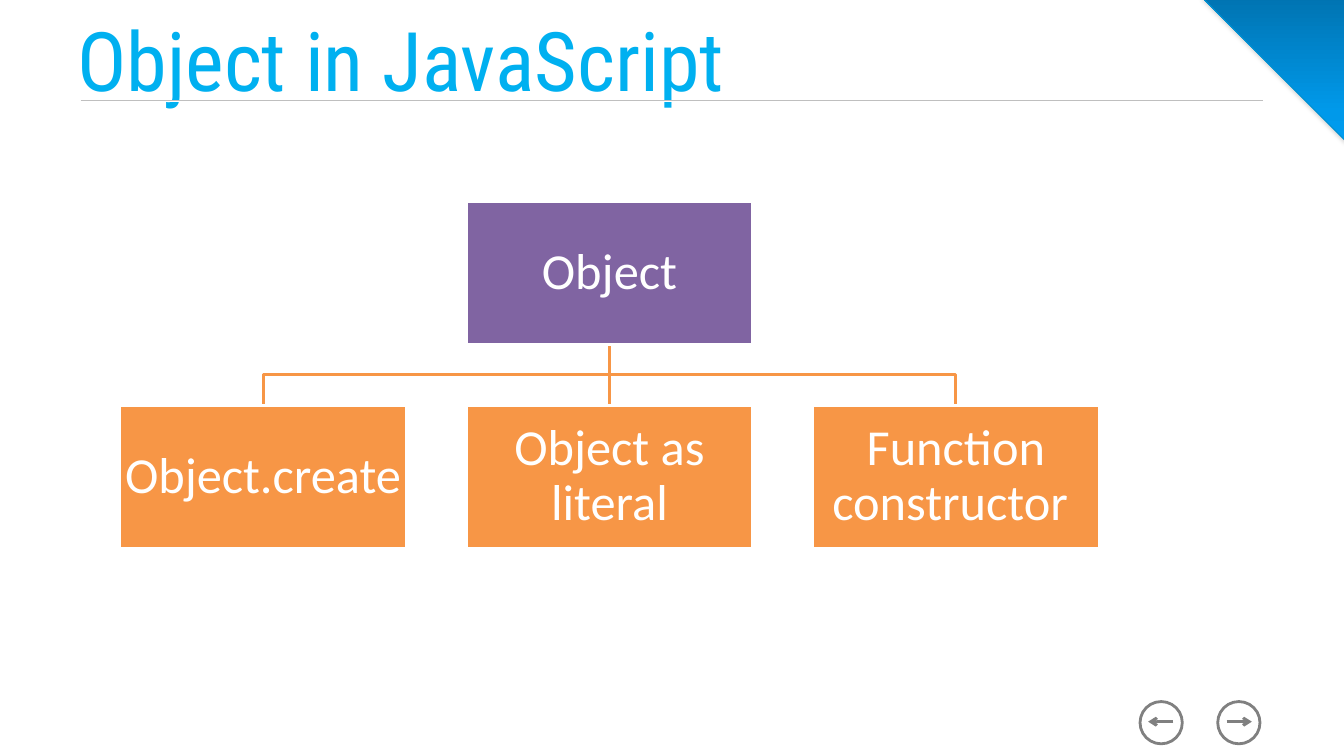
"""Build the "Object in JavaScript" slide with its hierarchy diagram."""
from copy import deepcopy

from lxml import etree
from pptx import Presentation
from pptx.dml.color import RGBColor
from pptx.enum import shapes, text
from pptx.oxml import ns
from pptx.util import Pt

COLORS = {
    "title": "00B0F0", "white": "FFFFFF", "rule": "BFBFBF", "button": "808080",
    "root": "8064A2", "child": "F79646", "corner_line": "0091D2",
    "corner_light": "009CF0", "corner_mid": "0099EA", "corner_dark": "0074B2",
}


def color(name):
    return RGBColor.from_string(COLORS[name])


def write_text(shape, content, *, font, size, fill, align, inset=None, spacing=None):
    frame = shape.text_frame
    frame.word_wrap = True
    frame.auto_size = text.MSO_AUTO_SIZE.NONE
    frame.vertical_anchor = text.MSO_ANCHOR.MIDDLE
    if inset is not None:
        frame.margin_left = frame.margin_right = Pt(inset)
        frame.margin_top = frame.margin_bottom = Pt(inset)
    paragraph = frame.paragraphs[0]
    paragraph.alignment = align
    paragraph.line_spacing = spacing
    run = paragraph.add_run()
    run.text = content
    run.font.name = font
    run.font.size = Pt(size)
    run.font.color.rgb = color(fill)


presentation = Presentation()
presentation.slide_width, presentation.slide_height = Pt(960), Pt(540)
slide = presentation.slides.add_slide(presentation.slide_layouts[5])
canvas = slide.shapes

for y, name in ((72, "rule"), (72.7, "white")):
    rule = canvas.add_connector(shapes.MSO_CONNECTOR.STRAIGHT, Pt(57.6), Pt(y), Pt(902.2), Pt(y))
    rule.line.color.rgb = color(name)
    rule.line.width = Pt(0.75)
    etree.SubElement(rule._element.spPr, ns.qn("a:effectLst"))

for left, start, end in ((814.3, 838.1, 820.1), (869.8, 876.2, 894.2)):
    circle = canvas.add_shape(shapes.MSO_SHAPE.OVAL, Pt(left), Pt(501.1), Pt(30.2), Pt(30.2))
    circle.shadow.inherit = False
    circle.fill.background()
    arrow = canvas.add_connector(
        shapes.MSO_CONNECTOR.STRAIGHT, Pt(start), Pt(515.5), Pt(end), Pt(515.5))
    for part in (circle, arrow):
        part.line.color.rgb = color("button")
        part.line.width = Pt(2)
    etree.SubElement(arrow.line._get_or_add_ln(), ns.qn("a:tailEnd"), type="arrow")
    etree.SubElement(arrow._element.spPr, ns.qn("a:effectLst"))

corner = canvas.add_shape(
    shapes.MSO_SHAPE.RIGHT_TRIANGLE, Pt(858.5), Pt(-2), Pt(102.2), Pt(102.2))
corner.rotation = 180
corner.line.color.rgb = color("corner_line")
corner.line.width = Pt(0.75)
corner.fill.gradient()
corner.fill.gradient_angle = 270
stop_list = corner._element.spPr.find(".//" + ns.qn("a:gsLst"))
stop_list.insert(1, deepcopy(stop_list[0]))
corner_stops = ((0, "corner_light"), (0.2, "corner_mid"), (1, "corner_dark"))
for stop, (position, name) in zip(corner.fill.gradient_stops, corner_stops):
    stop.position = position
    stop.color.rgb = color(name)
corner.shadow.inherit = False
effects = corner._element.spPr.find(ns.qn("a:effectLst"))
shadow = etree.SubElement(
    effects, ns.qn("a:outerShdw"), blurRad=str(Pt(3.1)), dist=str(Pt(1.8)),
    dir="5400000", rotWithShape="0")
shadow_color = etree.SubElement(shadow, ns.qn("a:srgbClr"), val=COLORS["button"])
etree.SubElement(shadow_color, ns.qn("a:alpha"), val="35000")

title = canvas.title
title.left, title.top, title.width, title.height = Pt(48), Pt(13.7), Pt(864), Pt(56.2)
write_text(title, "Object in JavaScript", font="Roboto Condensed", size=58.7,
           fill="title", align=text.PP_ALIGN.LEFT)

box_width, box_height, pitch = 204.5, 102.2, 247.4
center, root_top, child_top = 435.4, 144, 289.4
root_bottom = root_top + box_height
middle = (root_bottom + child_top) / 2
children = ("Object.create", "Object as literal", "Function constructor ")
child_centers = [center + (index - 1) * pitch for index in range(len(children))]

for x in child_centers:
    if x == center:
        link = canvas.add_connector(
            shapes.MSO_CONNECTOR.STRAIGHT, Pt(x), Pt(root_bottom), Pt(x), Pt(child_top))
        etree.SubElement(link._element.spPr, ns.qn("a:effectLst"))
    else:
        builder = canvas.build_freeform(Pt(center), Pt(root_bottom))
        bends = ((center, middle), (x, middle), (x, child_top))
        builder.add_line_segments([(Pt(a), Pt(b)) for a, b in bends], close=False)
        link = builder.convert_to_shape()
        link.fill.background()
        link.shadow.inherit = False
    link.line.color.rgb = color("child")
    link.line.width = Pt(2)

boxes = [("Object", center, root_top, "root")]
boxes += [(label, x, child_top, "child") for label, x in zip(children, child_centers)]
for label, x, top, name in boxes:
    box = canvas.add_shape(shapes.MSO_SHAPE.RECTANGLE, Pt(x - box_width / 2), Pt(top),
                           Pt(box_width), Pt(box_height))
    box.shadow.inherit = False
    box.fill.solid()
    box.fill.fore_color.rgb = color(name)
    box.line.color.rgb = color("white")
    box.line.width = Pt(2)
    write_text(box, label, font="Calibri", size=36, fill="white",
               align=text.PP_ALIGN.CENTER, inset=2, spacing=0.9)

presentation.save("out.pptx")
